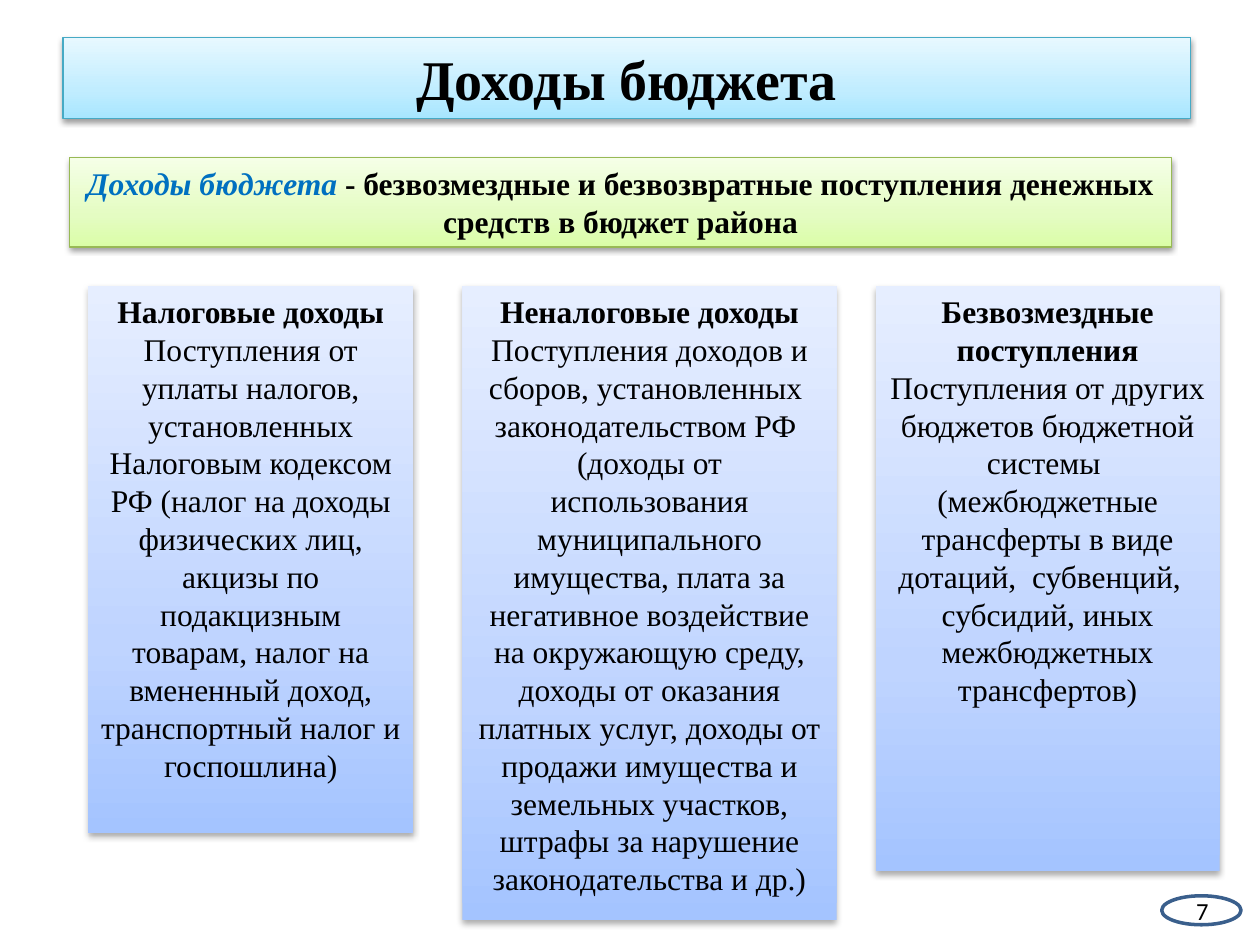
import pptx
import pptx.util
import pptx.oxml
import pptx.oxml.ns
from pptx.dml.color import RGBColor
from pptx.enum.shapes import MSO_SHAPE
from pptx.enum.text import MSO_ANCHOR, MSO_AUTO_SIZE, PP_ALIGN
from lxml import etree

THEME = {
    "serif": "Times New Roman", "sans": "Calibri",
    "title_size": 32, "text_size": 18, "number_size": 14,
    "text": "000000", "term": "0070C0", "paper": "FFFFFF",
    "badge_line": "3A5F8C", "title_line": "46AAC5", "definition_line": "98B955",
    # gradients run from the bottom edge to the top
    "title_fill": ("A7E6FF", "C1EDFF", "E7F8FF"),
    "definition_fill": ("DAFDA7", "E4FCC2", "F5FFE7"),
    "column_fill": ("A4C4FF", "BFD4FF", "E6EEFF"),
    "stops": (0, 35, 100),
    # opacity in percent, blur and distance in points
    "banner_shadow": (38, 3.1, 1.6), "column_shadow": (32, 3.5, 2.2),
}
GRID_COLUMNS, GRID_ROWS = 100, 75
COLUMN_TOP = 22.7

# left, width and height in grid units, then heading and paragraphs
INCOME_KINDS = [
    (7, 25.8, 43.4, "Налоговые доходы", [
        "Поступления от уплаты налогов, установленных Налоговым кодексом РФ "
        "(налог на доходы физических лиц, акцизы по подакцизным товарам, налог "
        "на вмененный доход, транспортный налог и госпошлина)"]),
    (36.7, 29.7, 50.3, "Неналоговые доходы", [
        "Поступления доходов и сборов, установленных  законодательством РФ ",
        "(доходы от использования муниципального имущества, плата за негативное "
        "воздействие на окружающую среду, доходы от оказания платных услуг, "
        "доходы от продажи имущества и земельных участков, штрафы за нарушение "
        "законодательства и др.)"]),
    (69.5, 27.3, 46.4, "Безвозмездные поступления", [
        "Поступления от других бюджетов бюджетной системы ",
        "(межбюджетные трансферты в виде дотаций,  субвенций,   субсидий, "
        "иных межбюджетных трансфертов)"]),
]


def set_all(target, values):
    for name, value in values.items():
        setattr(target, name, value)


class SlideBuilder:
    """Holds the theme and the current slide; places are in grid units."""

    def __init__(self, deck, theme):
        self.theme = theme
        self.cell_width = deck.slide_width / GRID_COLUMNS
        self.cell_height = deck.slide_height / GRID_ROWS
        self.slide = deck.slides.add_slide(deck.slide_layouts[5])

    def place(self, left, top, width, height):
        return (round(left * self.cell_width), round(top * self.cell_height),
                round(width * self.cell_width), round(height * self.cell_height))

    def outline(self, shape, color, points):
        if color is None:
            shape.line.fill.background()
            return
        shape.line.color.rgb = RGBColor.from_string(self.theme[color])
        shape.line.width = pptx.util.Pt(points)

    def gradient(self, shape, name):
        shape.fill.gradient()
        shape.fill.gradient_angle = 90
        qn = pptx.oxml.ns.qn
        stop_list = shape._element.spPr.find(".//" + qn("a:gsLst"))
        for stop in list(stop_list):
            stop_list.remove(stop)
        for position, color in zip(self.theme["stops"], self.theme[name]):
            stop = etree.SubElement(stop_list, qn("a:gs"), pos=str(position * 1000))
            etree.SubElement(stop, qn("a:srgbClr"), val=color)

    def shadow(self, shape, name):
        opacity, blur, distance = self.theme[name]
        shape.shadow.inherit = False
        effects = shape._element.spPr.find(pptx.oxml.ns.qn("a:effectLst"))
        effects.append(pptx.oxml.parse_xml(
            f'<a:outerShdw {pptx.oxml.ns.nsdecls("a")} blurRad="{pptx.util.Pt(blur)}" '
            f'dist="{pptx.util.Pt(distance)}" dir="5400000" rotWithShape="0">'
            f'<a:srgbClr val="000000"><a:alpha val="{opacity * 1000}"/></a:srgbClr>'
            '</a:outerShdw>'))

    def add_text(self, shape, paragraphs, size="text_size", font="serif",
                 align=PP_ALIGN.CENTER, **frame):
        """Each paragraph is a list of (text, colour, bold, italic) runs."""
        words = shape.text_frame
        set_all(words, {"word_wrap": True, "vertical_anchor": MSO_ANCHOR.TOP, **frame})
        for index, runs in enumerate(paragraphs):
            paragraph = words.add_paragraph() if index else words.paragraphs[0]
            paragraph.alignment = align
            for text, color, bold, italic in runs:
                run = paragraph.add_run()
                run.text = text
                set_all(run.font, {"name": self.theme[font], "bold": bold, "italic": italic,
                                   "size": pptx.util.Pt(self.theme[size])})
                run.font.color.rgb = RGBColor.from_string(self.theme[color])

    def title(self, text, *place):
        heading = self.slide.shapes.title
        set_all(heading, dict(zip(("left", "top", "width", "height"), self.place(*place))))
        self.gradient(heading, "title_fill")
        self.outline(heading, "title_line", 0.75)
        self.shadow(heading, "banner_shadow")
        self.add_text(heading, [[(text, "text", True, False)]], "title_size",
                      vertical_anchor=MSO_ANCHOR.MIDDLE, auto_size=MSO_AUTO_SIZE.NONE)

    def panel(self, place, paragraphs, fill, shadow, line=None):
        panel = self.slide.shapes.add_shape(MSO_SHAPE.RECTANGLE, *self.place(*place))
        self.gradient(panel, fill)
        self.outline(panel, line, 0.75)
        self.shadow(panel, shadow)
        self.add_text(panel, paragraphs, auto_size=MSO_AUTO_SIZE.SHAPE_TO_FIT_TEXT)

    def page_number(self, number, badge_place, text_place):
        badge = self.slide.shapes.add_shape(MSO_SHAPE.OVAL, *self.place(*badge_place))
        badge.shadow.inherit = False
        badge.fill.solid()
        badge.fill.fore_color.rgb = RGBColor.from_string(self.theme["paper"])
        self.outline(badge, "badge_line", 2)
        label = self.slide.shapes.add_textbox(*self.place(*text_place))
        self.add_text(label, [[(number, "text", False, False)]], "number_size", "sans",
                      PP_ALIGN.RIGHT, vertical_anchor=MSO_ANCHOR.MIDDLE)


def main():
    deck = pptx.Presentation()
    deck.slide_width, deck.slide_height = pptx.util.Inches(10), pptx.util.Inches(7.5)
    page = SlideBuilder(deck, THEME)
    page.title("Доходы бюджета", 5, 3, 89.5, 6.4)
    page.page_number("7", (92.2, 71.1, 6.3, 2.3), (71.1, 69.5, 25.8, 5.5))
    definition = [("Доходы бюджета ", "term", True, True),
                  ("- безвозмездные и безвозвратные поступления денежных средств "
                   "в бюджет района", "text", True, False)]
    page.panel((5.5, 12.5, 87.5, 7.1), [definition], "definition_fill",
               "banner_shadow", "definition_line")
    for left, width, height, heading, details in INCOME_KINDS:
        paragraphs = [[(heading, "text", True, False)]]
        paragraphs += [[(detail, "text", False, False)] for detail in details]
        page.panel((left, COLUMN_TOP, width, height), paragraphs,
                   "column_fill", "column_shadow")
    deck.save("out.pptx")


if __name__ == "__main__":
    main()
